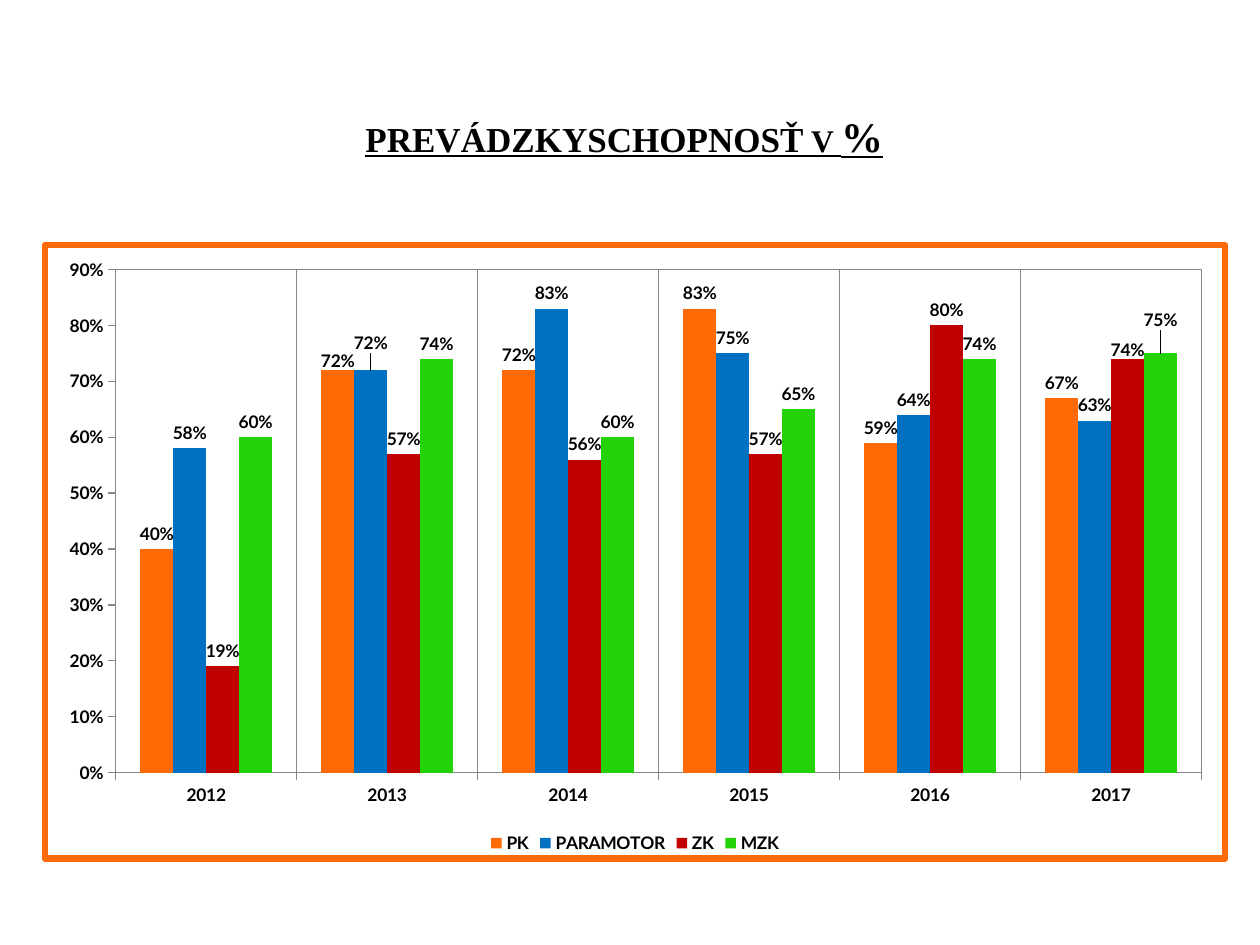
from lxml import etree
from pptx import Presentation
from pptx import util as u
from pptx.chart.data import CategoryChartData
from pptx.dml.color import RGBColor
from pptx.enum import chart as ch, text
from pptx.oxml import parse_xml
from pptx.oxml.ns import nsdecls, qn

YEARS = ["2012", "2013", "2014", "2015", "2016", "2017"]
SERIES = [
    ("PK", "FE6A06", (0.40, 0.72, 0.72, 0.83, 0.59, 0.67)),
    ("PARAMOTOR", "0070C0", (0.58, 0.72, 0.83, 0.75, 0.64, 0.63)),
    ("ZK", "C00000", (0.19, 0.57, 0.56, 0.57, 0.80, 0.74)),
    ("MZK", "24D307", (0.60, 0.74, 0.60, 0.65, 0.74, 0.75)),
]
LABEL_SHIFTS = {"PK": (1, 0.01), "PARAMOTOR": (1, -0.02), "ZK": (5, 0.01), "MZK": (5, -0.03)}


def rgb(value):
    return RGBColor.from_string(value)


def add_run(p, content, size, font="Times New Roman", color="000000", bold=True, underline=True):
    r = p.add_run()
    r.text = content
    f = r.font
    f.size, f.name, f.bold, f.underline = u.Pt(size), font, bold, underline
    f.color.rgb = rgb(color)


def layout(**values):
    parts = "".join(f'<c:{k} val="{v}"/>' for k, v in values.items())
    return parse_xml(f'<c:layout {nsdecls("c")}><c:manualLayout>{parts}</c:manualLayout></c:layout>')


def outline(color, width):
    return parse_xml(
        f'<c:spPr {nsdecls("c", "a")}><a:noFill/><a:ln w="{u.Pt(width)}"><a:solidFill>'
        f'<a:srgbClr val="{color}"/></a:solidFill><a:round/></a:ln></c:spPr>')


class Deck:
    """Slide builder that places elements by shares of the slide's size."""

    def __init__(self, width=10, height=7.5, font="Lato", grey="868686"):
        self.prs = Presentation()
        self.prs.slide_width, self.prs.slide_height = u.Inches(width), u.Inches(height)
        self.font, self.grey = font, grey
        self.s = self.prs.slides.add_slide(self.prs.slide_layouts[6])

    def box(self, x, y, w, h):
        sw, sh = self.prs.slide_width, self.prs.slide_height
        return int(x * sw), int(y * sh), int(w * sw), int(h * sh)

    def title(self, runs, *share):
        tf = self.s.shapes.add_textbox(*self.box(*share)).text_frame
        tf.word_wrap = False
        tf.auto_size = text.MSO_AUTO_SIZE.SHAPE_TO_FIT_TEXT
        p = tf.paragraphs[0]
        p.alignment = text.PP_ALIGN.CENTER
        for content, size in runs:
            add_run(p, content, size)

    def label_font(self, font):
        font.size, font.name, font.bold = u.Pt(10), self.font, True
        font.color.rgb = rgb("000000")

    def axis(self, axis, grid):
        axis.has_major_gridlines = grid
        if grid:
            axis.major_gridlines.format.line.color.rgb = rgb(self.grey)
        axis.major_tick_mark = ch.XL_TICK_MARK.OUTSIDE
        axis.format.line.color.rgb = rgb(self.grey)
        self.label_font(axis.tick_labels.font)

    def labels(self, ser, point, shift):
        dl = ser.data_labels
        dl.show_value, dl.position = True, ch.XL_LABEL_POSITION.OUTSIDE_END
        dl.number_format, dl.number_format_is_linked = "0%", False
        self.label_font(dl.font)
        moved = ser.points[point].data_label
        self.label_font(moved.font)
        moved.position = ch.XL_LABEL_POSITION.OUTSIDE_END
        idx = ser._element.find(f'{qn("c:dLbls")}/{qn("c:dLbl")}/{qn("c:idx")}')
        idx.addnext(layout(x=0, y=shift))

    def column_chart(self, cats, series, shifts, border, *share):
        data = CategoryChartData(number_format="0%")
        data.categories = cats
        for name, _, vals in series:
            data.add_series(name, vals)
        chart = self.s.shapes.add_chart(
            ch.XL_CHART_TYPE.COLUMN_CLUSTERED, *self.box(*share), data).chart
        self.label_font(chart.font)
        chart.has_title = False
        chart.has_legend = True
        chart.legend.position = ch.XL_LEGEND_POSITION.BOTTOM
        chart.legend.include_in_layout = False
        self.label_font(chart.legend.font)
        self.axis(chart.category_axis, True)
        val = chart.value_axis
        self.axis(val, False)
        val.minimum_scale, val.maximum_scale, val.major_unit = 0, 0.9, 0.1
        val.tick_labels.number_format = "0%"
        val.tick_labels.number_format_is_linked = False
        plot = chart.plots[0]
        plot.gap_width, plot.overlap, plot.vary_by_categories = 150, 0, False
        for ser, (name, color, _) in zip(plot.series, series):
            ser.format.fill.solid()
            ser.format.fill.fore_color.rgb = rgb(color)
            self.labels(ser, *shifts[name])
        space = chart._chartSpace
        space.find(qn("c:chart")).addnext(outline(border, 3.78))
        area = space.find(f'{qn("c:chart")}/{qn("c:plotArea")}')
        for old in area.findall(qn("c:layout")):
            area.remove(old)
        area.insert(0, layout(layoutTarget="inner", xMode="edge", yMode="edge",
                              x=0.06, y=0.04, w=0.92, h=0.82))
        area.append(outline(self.grey, 0.75))


def main():
    deck = Deck()
    deck.column_chart(YEARS, SERIES, LABEL_SHIFTS, "FE6A06", 0.033, 0.256, 0.942, 0.656)
    deck.title([("PREVÁDZKYSCHOPNOSŤ", 20), (" V ", 18), ("%", 24)], 0.278, 0.11, 0.435, 0.067)
    deck.prs.save("out.pptx")


if __name__ == "__main__":
    main()
